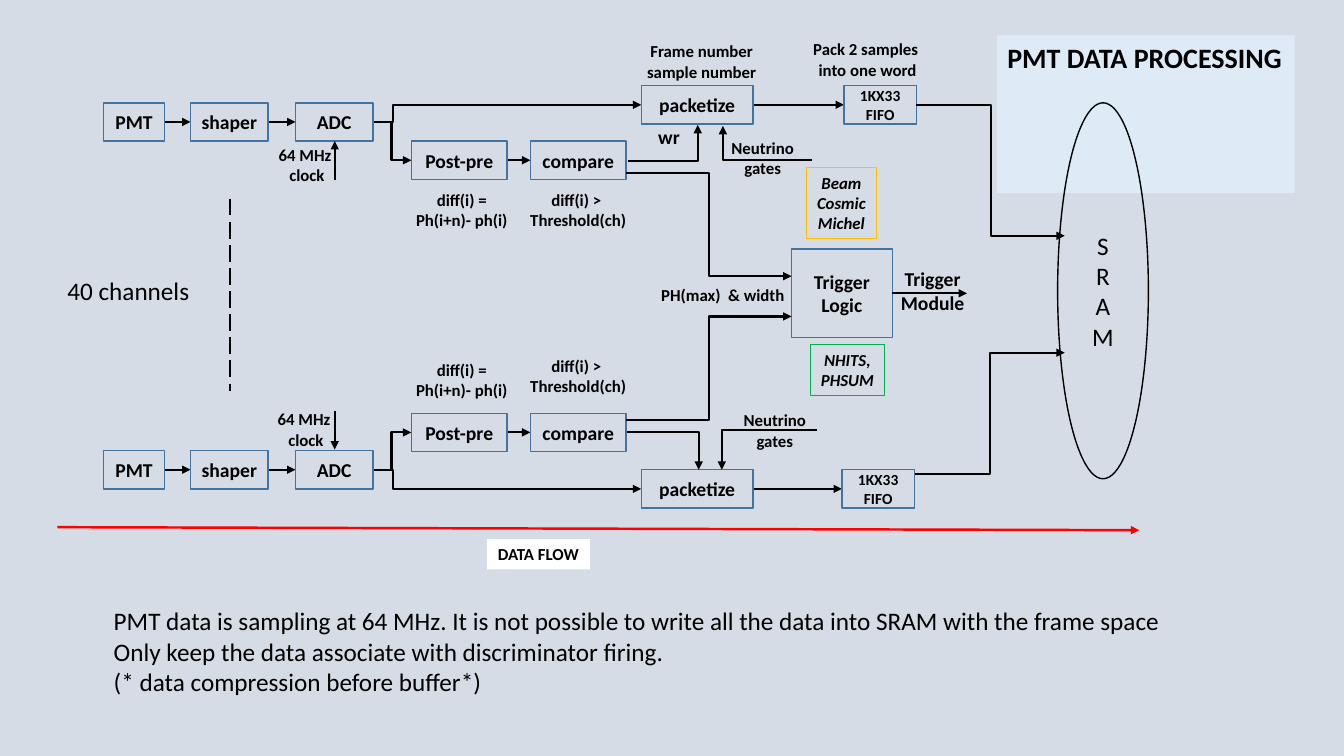
import pptx
import pptx.util
import pptx.dml.color
import pptx.enum.dml
import pptx.enum.shapes
import pptx.enum.text
import pptx.oxml.ns
import lxml.etree

Inches = pptx.util.Inches
RGBColor = pptx.dml.color.RGBColor
SHAPE = pptx.enum.shapes.MSO_SHAPE
CONNECTOR = pptx.enum.shapes.MSO_CONNECTOR
ALIGN = pptx.enum.text.PP_ALIGN
ANCHOR = pptx.enum.text.MSO_ANCHOR
AUTO_SIZE = pptx.enum.text.MSO_AUTO_SIZE
qn = pptx.oxml.ns.qn

BACKGROUND = RGBColor(0xD6, 0xDC, 0xE5)
BLACK = RGBColor(0, 0, 0)
WHITE = RGBColor(0xFF, 0xFF, 0xFF)
BLUE = RGBColor(0x43, 0x73, 0x9E)
PALE_BLUE = RGBColor(0xDE, 0xEB, 0xF7)
GREEN = RGBColor(0, 0xB0, 0x50)
AMBER = RGBColor(0xFF, 0xC0, 0)
RED = RGBColor(0xFF, 0, 0)


def write_text(sp, text, size=12, align=ALIGN.CENTER, boxed=False, **font):
    """Fill a shape with text; boxed text wraps and is centred vertically."""
    tf = sp.text_frame
    tf.text = text
    tf.word_wrap = boxed
    tf.auto_size = AUTO_SIZE.NONE if boxed else AUTO_SIZE.SHAPE_TO_FIT_TEXT
    tf.vertical_anchor = ANCHOR.MIDDLE if boxed else ANCHOR.TOP
    values = {"name": "Calibri", "size": pptx.util.Pt(size), "bold": True, **font}
    for p in tf.paragraphs:
        p.alignment = align
        for r in p.runs:
            r.font.color.rgb = BLACK
            for name, value in values.items():
                setattr(r.font, name, value)


def connect(x1, y1, x2, y2, bend=None, color=BLACK, width=1.5, arrow=True):
    """Draw a line; bend is the share of the run at which an elbow turns, 1 for a single corner."""
    kind = CONNECTOR.STRAIGHT if bend is None else CONNECTOR.ELBOW
    cxn = s.shapes.add_connector(kind, Inches(x1), Inches(y1), Inches(x2), Inches(y2))
    cxn.line.color.rgb = color
    cxn.line.width = pptx.util.Pt(width)
    spPr = cxn._element.spPr
    geom = spPr.find(qn("a:prstGeom"))
    if bend == 1:
        geom.set("prst", "bentConnector2")
    elif bend is not None:
        lxml.etree.SubElement(geom.find(qn("a:avLst")), qn("a:gd"),
                              name="adj1", fmla=f"val {round(bend * 100000)}")
    if arrow:
        lxml.etree.SubElement(spPr.find(qn("a:ln")), qn("a:tailEnd"), type="triangle")
    lxml.etree.SubElement(spPr, qn("a:effectLst"))
    return cxn


prs = pptx.Presentation()
prs.slide_width, prs.slide_height = Inches(13.33), Inches(7.5)
s = prs.slides.add_slide(prs.slide_layouts[5])
s.background.fill.solid()
s.background.fill.fore_color.rgb = BACKGROUND

title = s.shapes.title
title.left, title.top, title.width, title.height = map(Inches, (9.89, 0.35, 2.95, 0.44))
title.fill.solid()
title.fill.fore_color.rgb = PALE_BLUE
write_text(title, "PMT DATA PROCESSING", 20, ALIGN.LEFT)

# Processing blocks: the same chain for the first and the last channel
blocks = [(7.85, 2.47, 1, 0.88, "Trigger Logic", 14)]
for chain_y, compare_y, packet_y, fifo_x in ((1.02, 1.4, 0.85, 8.37), (4.47, 4.1, 4.66, 8.35)):
    blocks += [
        (1.03, chain_y, 0.6, 0.38, "PMT", 14),
        (1.89, chain_y, 0.77, 0.38, "shaper", 14),
        (2.93, chain_y, 0.77, 0.38, "ADC", 14),
        (4.08, compare_y, 0.95, 0.38, "Post-pre", 14),
        (5.26, compare_y, 0.95, 0.38, "compare", 14),
        (6.36, packet_y, 1.11, 0.38, "packetize", 14),
        (fifo_x, packet_y, 0.72, 0.38, "1KX33 FIFO", 11),
    ]
    chain_mid, compare_mid, packet_mid = (y + 0.19 for y in (chain_y, compare_y, packet_y))
    connect(1.63, chain_mid, 1.89, chain_mid)
    connect(2.67, chain_mid, 2.93, chain_mid)
    connect(5.04, compare_mid, 5.26, compare_mid)
    connect(7.47, packet_mid, fifo_x, packet_mid)
    connect(3.71, chain_mid, 4.08, compare_mid, 0.47)
    connect(3.71, chain_mid, 6.36, packet_mid, 0.07)

for x, y, w, h, text, size in blocks:
    sp = s.shapes.add_shape(SHAPE.RECTANGLE, *map(Inches, (x, y, w, h)))
    sp.shadow.inherit = False
    sp.fill.background()
    sp.line.color.rgb = BLUE
    sp.line.width = pptx.util.Pt(1)
    write_text(sp, text, size, boxed=True)

sram = s.shapes.add_shape(SHAPE.OVAL, *map(Inches, (10.49, 1.02, 0.9, 3.73)))
sram.shadow.inherit = False
sram.fill.background()
sram.line.color.rgb = BLACK
sram.line.width = pptx.util.Pt(1)
write_text(sram, "S\nR\nA\nM", 18, boxed=True, bold=False)

# Compare to packetize and trigger, gates to packetize, FIFO to SRAM
for x1, y1, x2, y2, bend in (
    (6.23, 1.6, 6.92, 1.24, 1),
    (6.22, 4.29, 6.93, 4.66, 1),
    (6.21, 1.72, 7.85, 2.74, 0.5),
    (6.21, 4.17, 7.85, 3.14, 0.5),
    (8.05, 1.59, 7.17, 1.25, 1),
    (8.1, 4.27, 7.16, 4.66, 1),
    (9.09, 1.04, 10.56, 2.34, 0.5),
    (9.08, 4.7, 10.56, 3.5, 0.5),
    (8.85, 2.91, 9.59, 2.91, None),
    (3.32, 1.79, 3.32, 1.4, None),
    (3.32, 4.08, 3.32, 4.46, None),
):
    connect(x1, y1, x2, y2, bend)

channels = connect(2.28, 1.97, 2.28, 3.88, arrow=False)
channels.line.dash_style = pptx.enum.dml.MSO_LINE.LONG_DASH
connect(0.57, 5.23, 11.3, 5.26, color=RED, width=1.75)

PLAIN = {"size": 18, "bold": False, "align": ALIGN.LEFT}
DIFF = "diff(i) =\nPh(i+n)- ph(i)"
THRESHOLD = "diff(i) > \nThreshold(ch)"
CLOCK = "64 MHz \nclock"
GATES = "Neutrino\ngates"
NOTES = ("PMT data is sampling at 64 MHz. It is not possible to write all the data into SRAM "
         "with the frame space\n"
         "Only keep the data associate with discriminator firing.\n"
         "(* data compression before buffer*)")
for x, y, w, h, text, fmt in (
    (4.02, 1.83, 1.12, 0.5, DIFF, {}),
    (4.02, 3.52, 1.12, 0.5, DIFF, {}),
    (5.15, 1.83, 1.17, 0.5, THRESHOLD, {}),
    (5.15, 3.48, 1.17, 0.5, THRESHOLD, {}),
    (2.66, 1.39, 0.77, 0.5, CLOCK, {}),
    (2.65, 4.01, 0.77, 0.5, CLOCK, {}),
    (7.15, 1.32, 0.83, 0.5, GATES, {}),
    (7.27, 4.02, 0.83, 0.5, GATES, {}),
    (6.31, 0.36, 1.3, 0.5, "Frame number\nsample number", {}),
    (7.96, 0.34, 1.29, 0.5, "Pack 2 samples \ninto one word", {}),
    (6.43, 1.19, 0.42, 0.34, "wr", {"size": 14, "align": ALIGN.LEFT}),
    (6.46, 2.78, 1.44, 0.3, "PH(max)  & width", {"align": ALIGN.LEFT}),
    (8.83, 2.6, 0.84, 0.57, "Trigger\nModule", {"size": 14}),
    (0.57, 2.68, 1.43, 0.4, "40 channels", PLAIN),
    (1.03, 5.96, 10.7, 1.01, NOTES, PLAIN),
):
    write_text(s.shapes.add_textbox(*map(Inches, (x, y, w, h))), text, **fmt)

for x, y, w, h, text, outline, italic in (
    (8.04, 3.42, 0.73, 0.5, "NHITS,\nPHSUM", GREEN, True),
    (8, 1.66, 0.69, 0.71, "Beam\nCosmic\nMichel", AMBER, True),
    (4.83, 5.35, 1.02, 0.3, "DATA FLOW", None, False),
):
    sp = s.shapes.add_shape(SHAPE.RECTANGLE, *map(Inches, (x, y, w, h)))
    sp.shadow.inherit = False
    if outline:
        sp.fill.background()
        sp.line.color.rgb = outline
        sp.line.width = pptx.util.Pt(0.75)
    else:
        sp.fill.solid()
        sp.fill.fore_color.rgb = WHITE
        sp.line.fill.background()
    write_text(sp, text, italic=italic)

prs.save("out.pptx")
